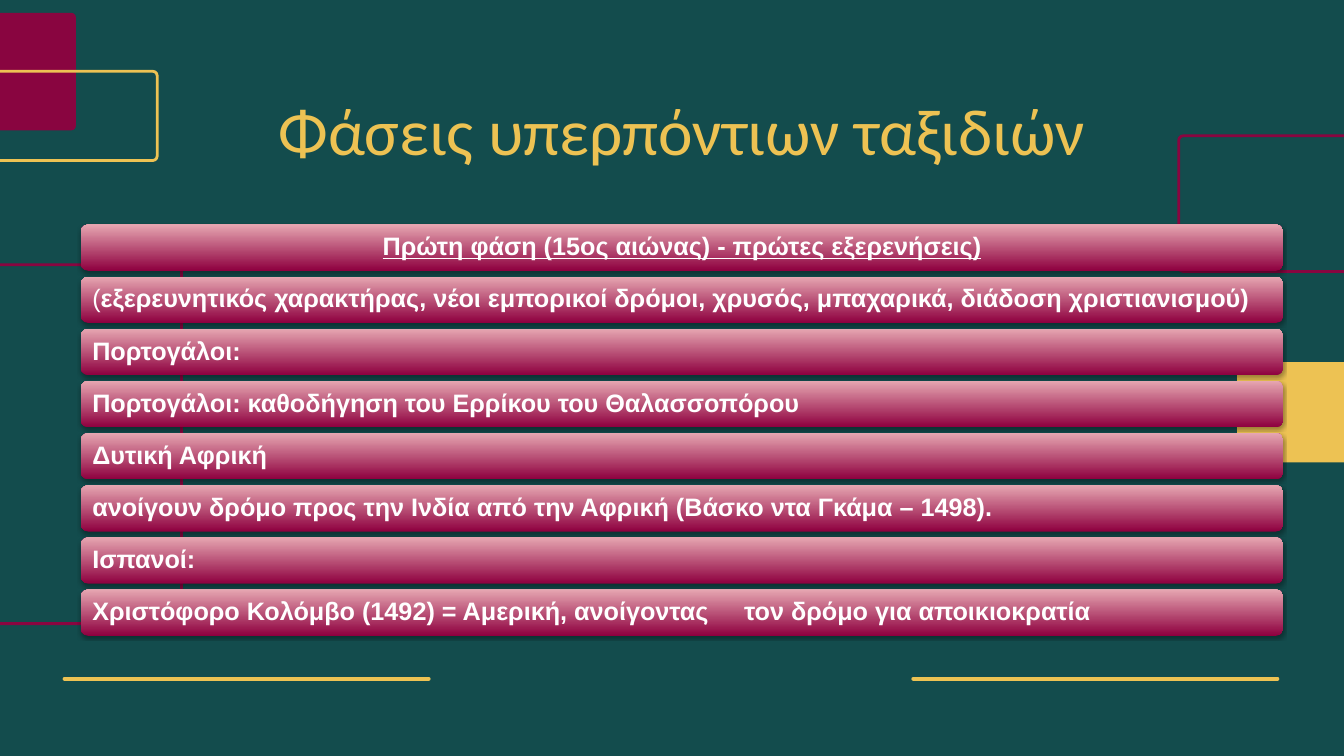
from dataclasses import dataclass

from lxml import etree
from pptx import Presentation
from pptx import util as u
from pptx.dml.color import RGBColor
from pptx.enum import shapes, text
from pptx.oxml import ns


@dataclass(frozen=True)
class Theme:
    back: str = "134C4D"
    gold: str = "EDC253"
    wine: str = "890540"
    dark: str = "8E003F"
    pale: str = "E6A6B1"
    white: str = "FFFFFF"
    head_font: str = "Calibri"
    body_font: str = "Arial"
    head_size: int = 70
    body_size: int = 27


THEME = Theme()
LEFT, WIDTH = 1.2, 17.9
TOP, HIGH, STEP = 3.34, 0.69, 0.776
TAB = 9.7

ROWS = [
    "Πρώτη φάση (15ος αιώνας) - πρώτες εξερενήσεις)",
    "(εξερευνητικός χαρακτήρας, νέοι εμπορικοί δρόμοι, χρυσός, μπαχαρικά, "
    "διάδοση χριστιανισμού)",
    "Πορτογάλοι:",
    "Πορτογάλοι: καθοδήγηση του Ερρίκου του Θαλασσοπόρου",
    "Δυτική Αφρική",
    "ανοίγουν δρόμο προς την Ινδία από την Αφρική (Βάσκο ντα Γκάμα – 1498).",
    "Ισπανοί:",
    "Χριστόφορο Κολόμβο (1492) = Αμερική, ανοίγοντας\tτον δρόμο για αποικιοκρατία",
]


def rgb(code):
    return RGBColor.from_string(code)


def add_node(parent, tag, **attrs):
    return etree.SubElement(parent, ns.qn(tag), attrs)


def add_box(slide, left, top, width, high):
    """Rounded rectangle without a shadow."""
    box = slide.shapes.add_shape(
        shapes.MSO_SHAPE.ROUNDED_RECTANGLE,
        u.Inches(left), u.Inches(top), u.Inches(width), u.Inches(high))
    box.shadow.inherit = False
    return box


def add_decor(slide, place, fill=None, line=None):
    """Filled block or outlined frame with small corners."""
    box = add_box(slide, *place)
    box.adjustments[0] = 0.07 / min(place[2:])
    if fill:
        box.fill.solid()
        box.fill.fore_color.rgb = rgb(fill)
    else:
        box.fill.background()
    if line:
        box.line.color.rgb = rgb(line)
        box.line.width = u.Pt(3)
    else:
        box.line.fill.background()


def add_rule(slide, left, right, y):
    rule = slide.shapes.add_connector(
        shapes.MSO_CONNECTOR.STRAIGHT,
        u.Inches(left), u.Inches(y), u.Inches(right), u.Inches(y))
    rule.line.color.rgb = rgb(THEME.gold)
    rule.line.width = u.Pt(4)
    rule.get_or_add_ln().set("cap", "rnd")
    add_node(rule._element.spPr, "a:effectLst")


def style_run(run, font, size, color, bold=False):
    run.font.name = font
    run.font.size = u.Pt(size)
    run.font.color.rgb = rgb(color)
    run.font.bold = bold


def set_frame(frame, side, edge):
    frame.word_wrap = True
    frame.vertical_anchor = text.MSO_ANCHOR.MIDDLE
    frame.margin_left = frame.margin_right = u.Inches(side)
    frame.margin_top = frame.margin_bottom = u.Inches(edge)


def add_title(slide, words):
    box = slide.shapes.add_textbox(
        u.Inches(LEFT), u.Inches(1.37), u.Inches(WIDTH), u.Inches(1.25))
    set_frame(box.text_frame, 0.1, 0.05)
    box.text_frame.text = words
    para = box.text_frame.paragraphs[0]
    para.alignment = text.PP_ALIGN.CENTER
    para.line_spacing = 0.9
    style_run(para.runs[0], THEME.head_font, THEME.head_size, THEME.gold)


def add_shade(bar):
    """Soft shadow just below the bar."""
    effects = bar._element.spPr.find(ns.qn("a:effectLst"))
    shade = add_node(effects, "a:outerShdw", blurRad=str(u.Pt(3.1)),
                     dist=str(u.Pt(1.8)), dir="5400000", rotWithShape="0")
    color = add_node(shade, "a:srgbClr", val="000000")
    add_node(color, "a:alpha", val="35000")


def add_bar(slide, top, words, head=False):
    bar = add_box(slide, LEFT, top, WIDTH, HIGH)
    bar.line.fill.background()
    bar.fill.gradient()
    bar.fill.gradient_angle = 90
    for stop, color in zip(bar.fill.gradient_stops, (THEME.dark, THEME.pale)):
        stop.color.rgb = rgb(color)
    add_shade(bar)

    # An opening bracket stays in regular weight
    set_frame(bar.text_frame, 0.14, 0.11)
    para = bar.text_frame.paragraphs[0]
    para.alignment = text.PP_ALIGN.CENTER if head else text.PP_ALIGN.LEFT
    para.line_spacing = 0.9
    if "\t" in words:
        tabs = add_node(para._p.get_or_add_pPr(), "a:tabLst")
        add_node(tabs, "a:tab", pos=str(u.Inches(TAB)), algn="l")
    parts = ["(", words[1:]] if words.startswith("(") else [words]
    for part in parts:
        run = para.add_run()
        run.text = part
        style_run(run, THEME.body_font, THEME.body_size, THEME.white, part != "(")
        run.font.underline = head


def main():
    deck = Presentation()
    deck.slide_width, deck.slide_height = u.Inches(20), u.Inches(11.25)
    slide = deck.slides.add_slide(deck.slide_layouts[6])
    slide.background.fill.solid()
    slide.background.fill.fore_color.rgb = rgb(THEME.back)

    # Rules and blocks behind the content
    for left in (13.59, 0.96):
        add_rule(slide, left, left + 5.42, 10.1)
    add_decor(slide, (-1.2, 3.94, 3.9, 5.34), line=THEME.wine)
    add_decor(slide, (18.41, 5.39, 2.45, 1.49), fill=THEME.gold)
    add_decor(slide, (-1.73, 0.19, 2.86, 1.75), fill=THEME.wine)
    add_decor(slide, (-0.83, 1.06, 3.17, 1.33), line=THEME.gold)
    add_decor(slide, (17.54, 2.02, 4.77, 2.02), line=THEME.wine)

    # Title and stacked bars
    add_title(slide, "Φάσεις υπερπόντιων ταξιδιών")
    for i, words in enumerate(ROWS):
        add_bar(slide, TOP + i * STEP, words, head=i == 0)

    deck.save("out.pptx")


if __name__ == "__main__":
    main()
